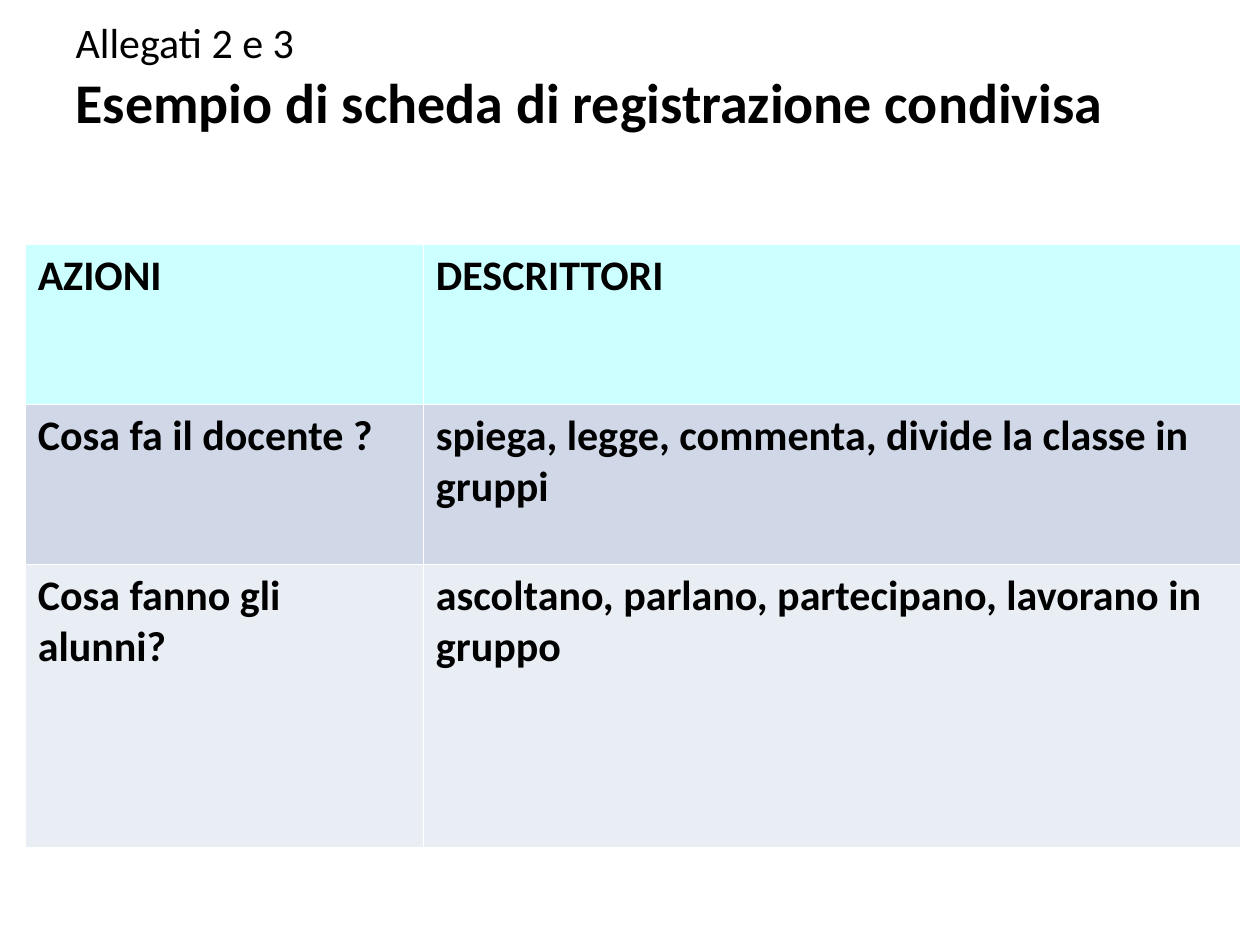
from pptx import Presentation
from pptx.dml.color import RGBColor
from pptx.enum.text import MSO_ANCHOR, MSO_AUTO_SIZE, PP_ALIGN
from pptx.util import Inches, Pt

LEFT = PP_ALIGN.LEFT
MIDDLE = MSO_ANCHOR.MIDDLE
NO_FIT = MSO_AUTO_SIZE.NONE
TITLE_ONLY = 5


def color(hex_value):
    return RGBColor.from_string(hex_value)


def write(paragraph, text, size, bold):
    paragraph.text = text
    paragraph.alignment = LEFT
    font = paragraph.font
    font.name = "Calibri"
    font.size = Pt(size)
    font.bold = bold
    font.color.rgb = color("000000")


prs = Presentation()
prs.slide_width, prs.slide_height = Inches(10), Inches(7.5)
slide = prs.slides.add_slide(prs.slide_layouts[TITLE_ONLY])

# Heading: a light line above a bold one
heading = slide.shapes.title
heading.left, heading.top = Inches(0.5), Inches(0.05)
heading.width, heading.height = Inches(9), Inches(1.1)
heading_frame = heading.text_frame
heading_frame.auto_size = NO_FIT
heading_frame.vertical_anchor = MIDDLE
write(heading_frame.paragraphs[0], "Allegati 2 e 3", 24, False)
write(heading_frame.add_paragraph(), "Esempio di scheda di registrazione condivisa", 32, True)

# Recording sheet: height, fill and texts of each row
column_widths = [3.16, 6.49]
sheet_rows = [
    (1.27, "CCFFFF", ["AZIONI", "DESCRITTORI"]),
    (1.27, "D0D8E8", ["Cosa fa il docente ?",
                      "spiega, legge, commenta, divide la classe in gruppi"]),
    (2.25, "E9EDF4", ["Cosa fanno gli alunni?",
                      "ascoltano, parlano, partecipano, lavorano in gruppo"]),
]
sheet = slide.shapes.add_table(
    len(sheet_rows), len(column_widths), Inches(0.2), Inches(1.94),
    Inches(sum(column_widths)), Inches(sum(height for height, _, _ in sheet_rows)),
).table
for column, width in zip(sheet.columns, column_widths):
    column.width = Inches(width)
for row, (height, fill, texts) in zip(sheet.rows, sheet_rows):
    row.height = Inches(height)
    for cell, text in zip(row.cells, texts):
        cell.fill.solid()
        cell.fill.fore_color.rgb = color(fill)
        write(cell.text_frame.paragraphs[0], text, 24, True)

prs.save("out.pptx")
